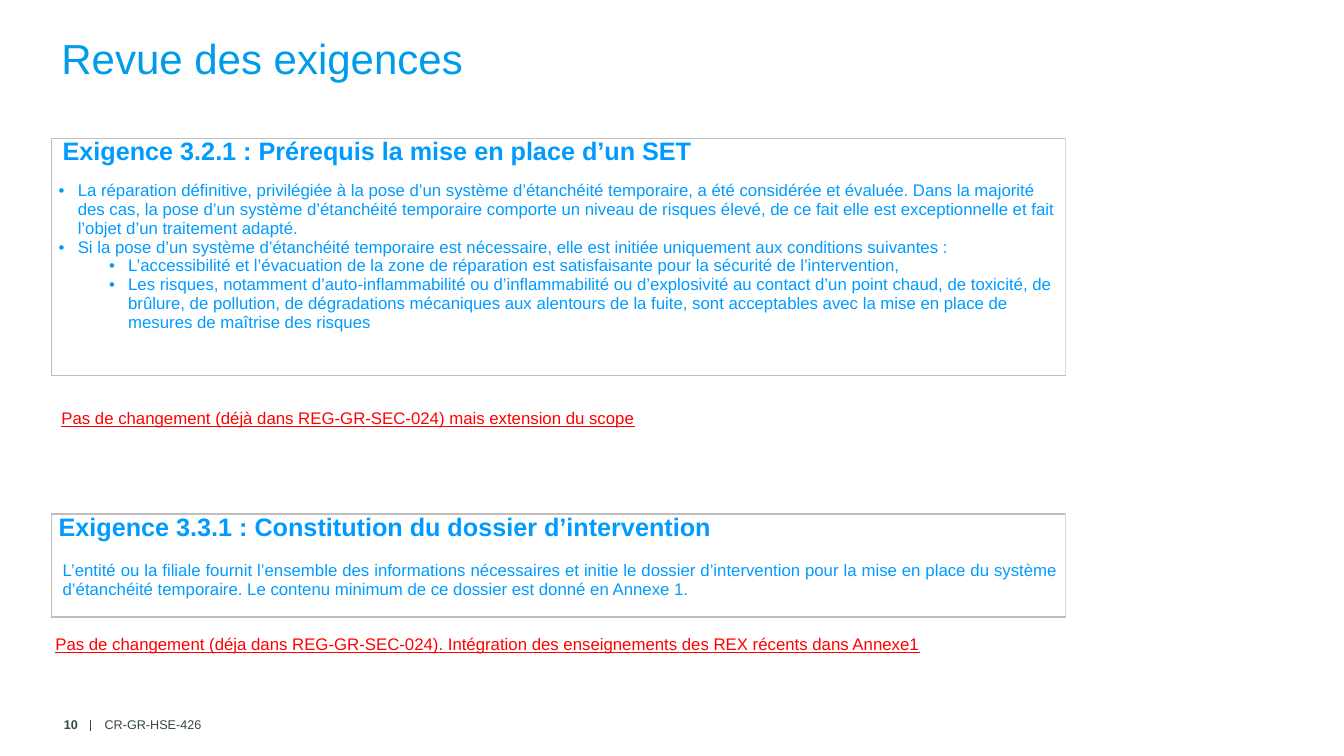
from lxml import etree
from pptx import Presentation, util as u
from pptx.dml.color import RGBColor
from pptx.enum import shapes, text
from pptx.oxml import ns

SKY = RGBColor(0x00, 0x9C, 0xEA)
BLUE = RGBColor(0x00, 0x9B, 0xFF)
RED = RGBColor(0xFF, 0x00, 0x00)
SLATE = RGBColor(0x37, 0x46, 0x49)
GREY = RGBColor(0xBF, 0xBF, 0xBF)
PALE = RGBColor(0xD9, 0xD9, 0xD9)

TITLE = dict(size=u.Pt(30), color=SKY)
HEAD = dict(size=u.Pt(18), color=BLUE, bold=True)
BODY = dict(size=u.Pt(12), color=BLUE, bold=False)
NOTE = dict(size=u.Pt(12), color=RED, underline=True)
FOOT = dict(size=u.Pt(9), color=SLATE)
LEFT, RIGHT, JUST = (text.PP_ALIGN.LEFT, text.PP_ALIGN.RIGHT,
                     text.PP_ALIGN.JUSTIFY)

WIDE, HIGH = u.Inches(13.33), u.Inches(7.5)
EDGE, SPAN = 3.83, 75.47    # left edge and width of the content column


def col(share):
    """Percent of the slide's width."""
    return u.Emu(round(WIDE * share / 100))


def row(share):
    """Percent of the slide's height."""
    return u.Emu(round(HIGH * share / 100))


def child(node, tag, **attrs):
    return etree.SubElement(node, ns.qn(tag), **attrs)


def write(par, words, style, align=LEFT):
    par.alignment = align
    run = par.add_run()
    run.text = words
    run.font.name = "Arial"
    for key, val in style.items():
        if key == "color":
            run.font.color.rgb = val
        else:
            setattr(run.font, key, val)


def indent(par, left, bullet=False):
    props = par._p.get_or_add_pPr()
    props.set("marL", str(u.Inches(left)))
    props.set("indent", str(u.Inches(-0.19 if bullet else 0)))
    if bullet:
        child(props, "a:buFont", typeface="Arial")
        child(props, "a:buChar", char="•")


def label(slide, box, words, style, align=LEFT, anchor=text.MSO_ANCHOR.TOP):
    x, y, w, h = box
    frame = slide.shapes.add_textbox(col(x), row(y), col(w), row(h)).text_frame
    frame.word_wrap = True
    frame.vertical_anchor = anchor
    write(frame.paragraphs[0], words, style, align)


def border(cell, sides):
    """Outline the sides in the dict; the other sides stay clear."""
    props = cell._tc.get_or_add_tcPr()
    for spot, side in enumerate("LRTB"):
        line = etree.Element(ns.qn("a:ln" + side), w=str(u.Pt(1)))
        if side in sides:
            fill = child(line, "a:solidFill")
            child(fill, "a:srgbClr", val=str(sides[side]))
        else:
            child(line, "a:noFill")
        props.insert(spot, line)


def panel(slide, top, rows, head, shift, lines, gap, align):
    """Framed table: heading row, body row, empty closing row."""
    table = slide.shapes.add_table(3, 1, col(EDGE), row(top), col(SPAN),
                                   row(sum(rows))).table
    table.first_row = table.horz_banding = False
    ends = [{"T": GREY}, {}, {"B": GREY}]
    for i, (size, end) in enumerate(zip(rows, ends)):
        table.rows[i].height = row(size)
        cell = table.cell(i, 0)
        cell.fill.background()
        border(cell, {"L": GREY, "R": PALE, **end})
        cell.margin_left = cell.margin_right = col(0.53)
        cell.margin_top = cell.margin_bottom = 0

    first = table.cell(0, 0).text_frame.paragraphs[0]
    indent(first, shift)
    write(first, head, HEAD, JUST)

    body = table.cell(1, 0)
    body.margin_top = row(gap)
    frame = body.text_frame
    for i, (level, left, bullet, words) in enumerate(lines):
        par = frame.add_paragraph() if i else frame.paragraphs[0]
        par.level = level
        indent(par, left, bullet)
        write(par, words, BODY, align)

    # small type keeps the closing row low
    child(table.cell(2, 0).text_frame.paragraphs[0]._p, "a:endParaRPr",
          sz="800")


def footer(slide, top, high):
    mid = text.MSO_ANCHOR.MIDDLE
    rule = slide.shapes.add_connector(
        shapes.MSO_CONNECTOR.STRAIGHT, col(6.75), row(top + 1.2),
        col(6.75), row(top + 2.67))
    rule.line.color.rgb = SLATE
    rule.line.width = u.Pt(1)
    child(rule._element.spPr, "a:effectLst")
    label(slide, (7.05, top, 29.56, high), "CR-GR-HSE-426", FOOT, LEFT, mid)
    label(slide, (1.8, top, 4.73, high), "10", {**FOOT, "bold": True},
          RIGHT, mid)


def main():
    deck = Presentation()
    deck.slide_width, deck.slide_height = WIDE, HIGH
    slide = deck.slides.add_slide(deck.slide_layouts[6])

    label(slide, (EDGE, 3.6, 79.75, 14.67), "Revue des exigences", TITLE)

    # First requirement
    panel(slide, 18.27, (4, 24.1, 3.33),
          "Exigence 3.2.1 : Prérequis la mise en place d’un SET", 0.04, [
              (0, 0.19, True, "La réparation définitive, privilégiée à la "
               "pose d’un système d’étanchéité temporaire, a été considérée "
               "et évaluée. Dans la majorité des cas, la pose d’un système "
               "d’étanchéité temporaire comporte un niveau de risques élevé, "
               "de ce fait elle est exceptionnelle et fait l’objet d’un "
               "traitement adapté."),
              (0, 0.19, True, "Si la pose d’un système d’étanchéité "
               "temporaire est nécessaire, elle est initiée uniquement aux "
               "conditions suivantes :"),
              (1, 0.69, True, "L’accessibilité et l’évacuation de la zone de "
               "réparation est satisfaisante pour la sécurité de "
               "l’intervention,"),
              (1, 0.69, True, "Les risques, notamment d’auto-inflammabilité "
               "ou d’inflammabilité ou d’explosivité au contact d’un point "
               "chaud, de toxicité, de brûlure, de pollution, de dégradations "
               "mécaniques aux alentours de la fuite, sont acceptables avec "
               "la mise en place de mesures de maîtrise des risques"),
          ], 1.73, LEFT)
    label(slide, (EDGE, 53.33, SPAN, 7.33), "Pas de changement (déjà dans "
          "REG-GR-SEC-024) mais extension du scope", NOTE)

    # Second requirement
    panel(slide, 68, (3.87, 7.47, 2),
          "Exigence 3.3.1 : Constitution du dossier d’intervention", 0, [
              (0, 0.04, False, "L’entité ou la filiale fournit l’ensemble des "
               "informations nécessaires et initie le dossier d’intervention "
               "pour la mise en place du système d’étanchéité temporaire. Le "
               "contenu minimum de ce dossier est donné en Annexe 1."),
          ], 2.27, JUST)
    label(slide, (3.38, 83.2, SPAN, 7.33), "Pas de changement (déja dans "
          "REG-GR-SEC-024). Intégration des enseignements des REX récents "
          "dans Annexe1", NOTE)

    footer(slide, 94, 3.73)
    deck.save("out.pptx")


if __name__ == "__main__":
    main()
